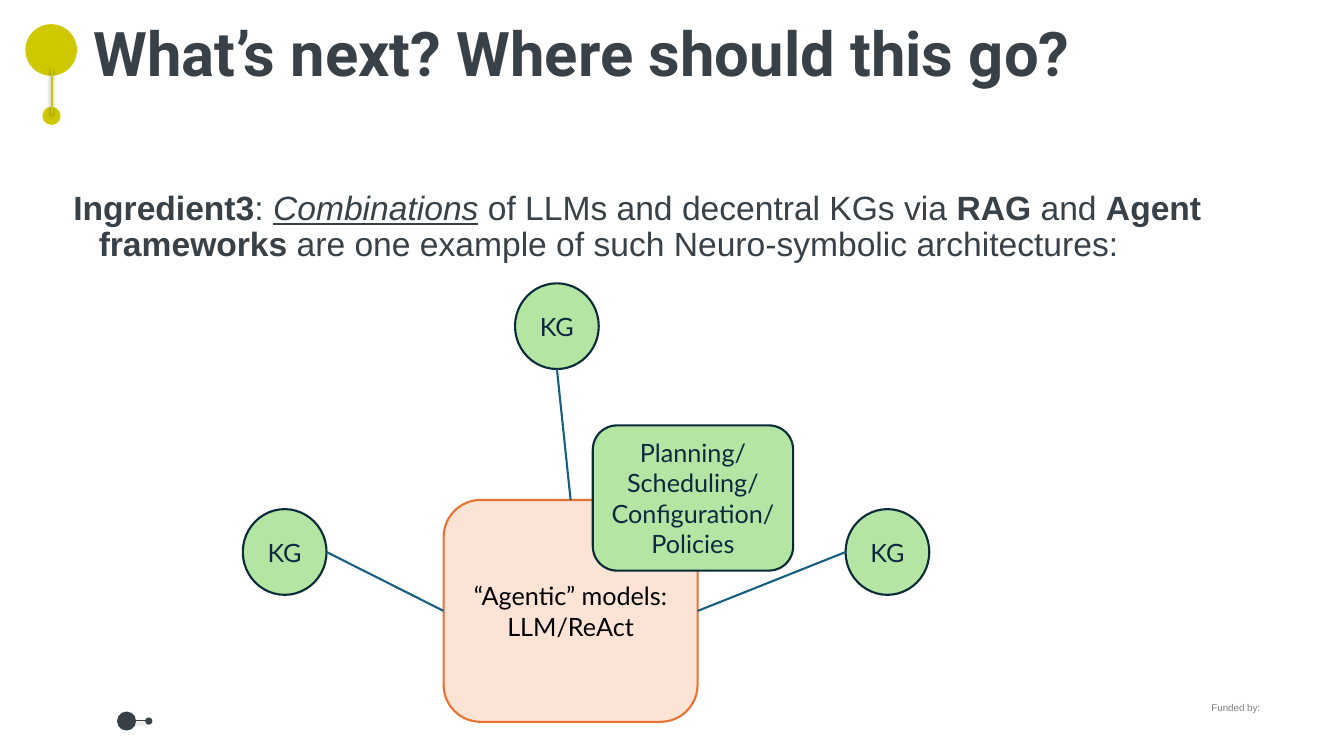
from lxml import etree
from pptx import Presentation
from pptx import util as u
from pptx.dml.color import RGBColor
from pptx.enum import shapes, text
from pptx.oxml import ns

THEME = {
    "slate": RGBColor.from_string("384147"),
    "lime": RGBColor.from_string("CFC700"),
    "grey": RGBColor.from_string("7F7F7F"),
    "navy": RGBColor.from_string("0E2841"),
    "black": RGBColor.from_string("000000"),
    "green": RGBColor.from_string("B4E5A2"),
    "green_edge": RGBColor.from_string("092A39"),
    "peach": RGBColor.from_string("FBE3D6"),
    "orange": RGBColor.from_string("E97132"),
    "teal": RGBColor.from_string("156082"),
    "title": u.Pt(44),
    "body": u.Pt(24),
    "label": u.Pt(18),
    "footer": u.Pt(7),
}

presentation = Presentation()
presentation.slide_width = u.Cm(33.87)
presentation.slide_height = u.Cm(19.05)
slide = presentation.slides.add_slide(presentation.slide_layouts[6])


def add_node(kind, box, fill, edge=None, lines=(), color="navy"):
    shape = slide.shapes.add_shape(kind, *map(u.Cm, box))
    shape.shadow.inherit = False
    shape.fill.solid()
    shape.fill.fore_color.rgb = THEME[fill]
    if edge:
        shape.line.color.rgb = THEME[edge]
        shape.line.width = u.Pt(1.5)
    else:
        shape.line.fill.background()
    shape.text_frame.text = "\n".join(lines)
    for paragraph in shape.text_frame.paragraphs:
        paragraph.alignment = text.PP_ALIGN.CENTER
        label_format = {"name": "Lato", "size": THEME["label"]}
        for name, value in label_format.items():
            setattr(paragraph.font, name, value)
        paragraph.font.color.rgb = THEME[color]
    return shape


def add_line(start, end, color, width=1.5, shadow=False):
    connector = slide.shapes.add_connector(shapes.MSO_CONNECTOR.STRAIGHT, *start, *end)
    connector.line.color.rgb = THEME[color]
    connector.line.width = u.Pt(width)
    effects = etree.SubElement(connector._element.spPr, ns.qn("a:effectLst"))
    if shadow:
        outer = etree.SubElement(effects, ns.qn("a:outerShdw"), blurRad=str(u.Pt(3.1)),
                                 dist=str(u.Pt(1.6)), dir="5400000", rotWithShape="0")
        tint = etree.SubElement(outer, ns.qn("a:srgbClr"), val="000000")
        etree.SubElement(tint, ns.qn("a:alpha"), val="38000")


OVAL = shapes.MSO_SHAPE.OVAL
ROUNDED = shapes.MSO_SHAPE.ROUNDED_RECTANGLE

add_line((u.Cm(3.35), u.Cm(18.16)), (u.Cm(3.78), u.Cm(18.16)), "slate", 0.75, True)
for left, top, diameter, color in [
    (3.66, 18.08, 0.18, "slate"),
    (2.95, 17.93, 0.48, "slate"),
    (1.07, 2.69, 0.46, "lime"),
    (0.64, 0.61, 1.3, "lime"),
]:
    add_node(OVAL, (left, top, diameter, diameter), color)
add_line((u.Cm(1.3), u.Cm(1.7)), (u.Cm(1.3), u.Cm(2.87)), "lime", 1.5, True)

bold = {"bold": True}
text_blocks = [
    ((30.28, 17.55, 2.31, 0.53), "Arial", "footer", "grey", {}, [("Funded by:", {})]),
    ((0.97, 4.7, 30.58, 12.09), "Arial", "body", "slate", {"line_spacing": 0.9}, [
        ("Ingredient3", bold),
        (": ", {}),
        ("Combinations", {"italic": True, "underline": True}),
        (" of LLMs and decentral KGs via ", {}),
        ("RAG ", bold),
        ("and ", {}),
        ("Agent frameworks ", bold),
        ("are one example of such Neuro-symbolic architectures:", {}),
    ]),
    ((2.11, 0.46, 30.71, 2.74), "Roboto", "title", "slate", {"line_spacing": 0.9},
     [("What’s next? Where should this go?", bold)]),
]
for box, font, size, color, spacing, runs in text_blocks:
    frame = slide.shapes.add_textbox(*map(u.Cm, box)).text_frame
    frame.word_wrap = True
    paragraph = frame.paragraphs[0]
    for name, value in spacing.items():
        setattr(paragraph, name, value)
    if size == "body":
        properties = paragraph._p.get_or_add_pPr()
        properties.set("marL", str(u.Cm(1.27)))
        properties.set("indent", str(u.Cm(-0.64)))
    for wording, emphasis in runs:
        run = paragraph.add_run()
        run.text = wording
        run_format = {"name": font, "size": THEME[size], **emphasis}
        for name, value in run_format.items():
            setattr(run.font, name, value)
        run.font.color.rgb = THEME[color]

right_graph, left_graph, top_graph = [
    add_node(OVAL, (left, top, 2.11, 2.16), "green", "green_edge", ["KG"])
    for left, top in [(21.31, 12.83), (6.12, 12.83), (12.98, 7.14)]
]
agent = add_node(ROUNDED, (11.18, 12.6, 6.4, 5.59), "peach", "orange",
                 ["“Agentic” models:", "LLM/ReAct"], "black")

agent_middle = agent.top + agent.height // 2
graph_middle = left_graph.top + left_graph.height // 2
add_line((left_graph.left + left_graph.width, graph_middle), (agent.left, agent_middle), "teal")
add_line((top_graph.left + top_graph.width // 2, top_graph.top + top_graph.height),
         (agent.left + agent.width // 2, agent.top), "teal")
add_line((right_graph.left, graph_middle), (agent.left + agent.width, agent_middle), "teal")

add_node(ROUNDED, (14.94, 10.72, 5.05, 3.66), "green", "green_edge",
         ["Planning/ Scheduling/", "Configuration/", "Policies"])

presentation.save("out.pptx")
